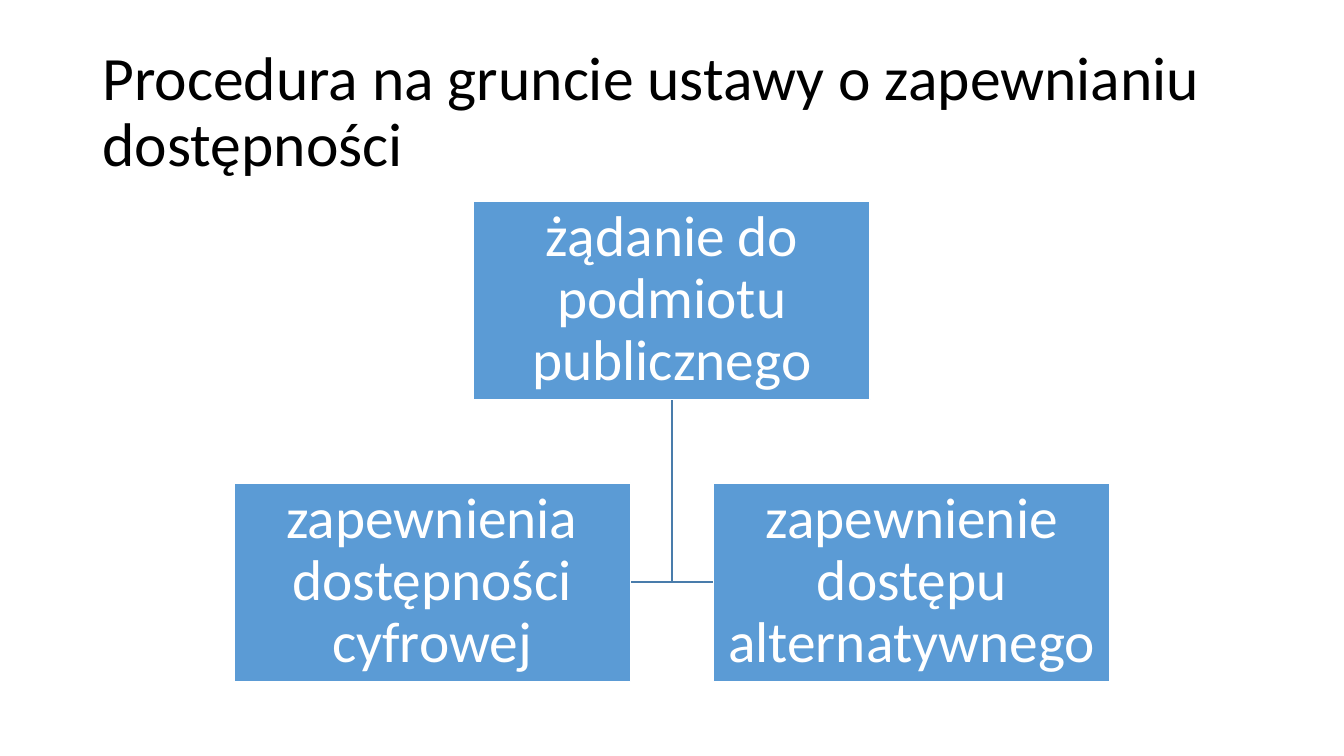
from pptx import Presentation
from pptx.dml.color import RGBColor
from pptx.enum.shapes import MSO_SHAPE
from pptx.enum.text import MSO_ANCHOR, MSO_AUTO_SIZE, PP_ALIGN
from pptx.util import Cm, Pt

TITLE = "Procedura na gruncie ustawy o zapewnianiu dostępności"
ROOT = "żądanie do podmiotu publicznego"
CHILDREN = ["zapewnienia dostępności cyfrowej",
            "zapewnienie dostępu alternatywnego"]
COLORS = {"box": "5B9BD5", "link": "497CAB", "white": "FFFFFF", "black": "000000"}
FONT = "Calibri"

WIDE, HIGH = Cm(33.87), Cm(19.05)
BOX_W, BOX_H, GAP = Cm(9.99), Cm(5), Cm(2.1)
MID = WIDE // 2
ROOT_TOP = Cm(5.07)
ROW_TOP = ROOT_TOP + BOX_H + GAP
ROW_MID = ROW_TOP + BOX_H // 2


def color(name):
    return RGBColor.from_string(COLORS[name])


def write(frame, text, size, tint, align):
    frame.text = text
    frame.word_wrap = True
    frame.auto_size = MSO_AUTO_SIZE.NONE
    frame.vertical_anchor = MSO_ANCHOR.MIDDLE
    para = frame.paragraphs[0]
    para.alignment = align
    para.line_spacing = 0.9
    font = para.runs[0].font
    font.name, font.size = FONT, Pt(size)
    font.color.rgb = color(tint)


def outline(shape, tint):
    shape.shadow.inherit = False
    shape.line.color.rgb = color(tint)
    shape.line.width = Pt(1)


def add_link(shapes, end):
    """Draw an elbow from under the root box to a child's inner side."""
    pen = shapes.build_freeform(MID, ROOT_TOP + BOX_H)
    pen.add_line_segments([(MID, ROW_MID), (end, ROW_MID)], close=False)
    link = pen.convert_to_shape()
    link.fill.background()
    outline(link, "link")


def add_box(shapes, text, left, top):
    box = shapes.add_shape(MSO_SHAPE.RECTANGLE, left, top, BOX_W, BOX_H)
    box.fill.solid()
    box.fill.fore_color.rgb = color("box")
    outline(box, "white")
    frame = box.text_frame
    frame.margin_left = frame.margin_right = Cm(0.08)
    frame.margin_top = frame.margin_bottom = Cm(0.08)
    write(frame, text, 41, "white", PP_ALIGN.CENTER)


def main():
    deck = Presentation()
    deck.slide_width, deck.slide_height = WIDE, HIGH
    slide = deck.slides.add_slide(deck.slide_layouts[5])
    shapes = slide.shapes

    title = shapes.title
    title.left, title.top = Cm(2.33), Cm(1.02)
    title.width, title.height = Cm(29.21), Cm(3.68)
    write(title.text_frame, TITLE, 44, "black", PP_ALIGN.LEFT)

    for end in (MID + GAP // 2, MID - GAP // 2):
        add_link(shapes, end)

    add_box(shapes, ROOT, MID - BOX_W // 2, ROOT_TOP)
    start = MID - GAP // 2 - BOX_W
    for i, text in enumerate(CHILDREN):
        add_box(shapes, text, start + i * (BOX_W + GAP), ROW_TOP)

    deck.save("out.pptx")


if __name__ == "__main__":
    main()
